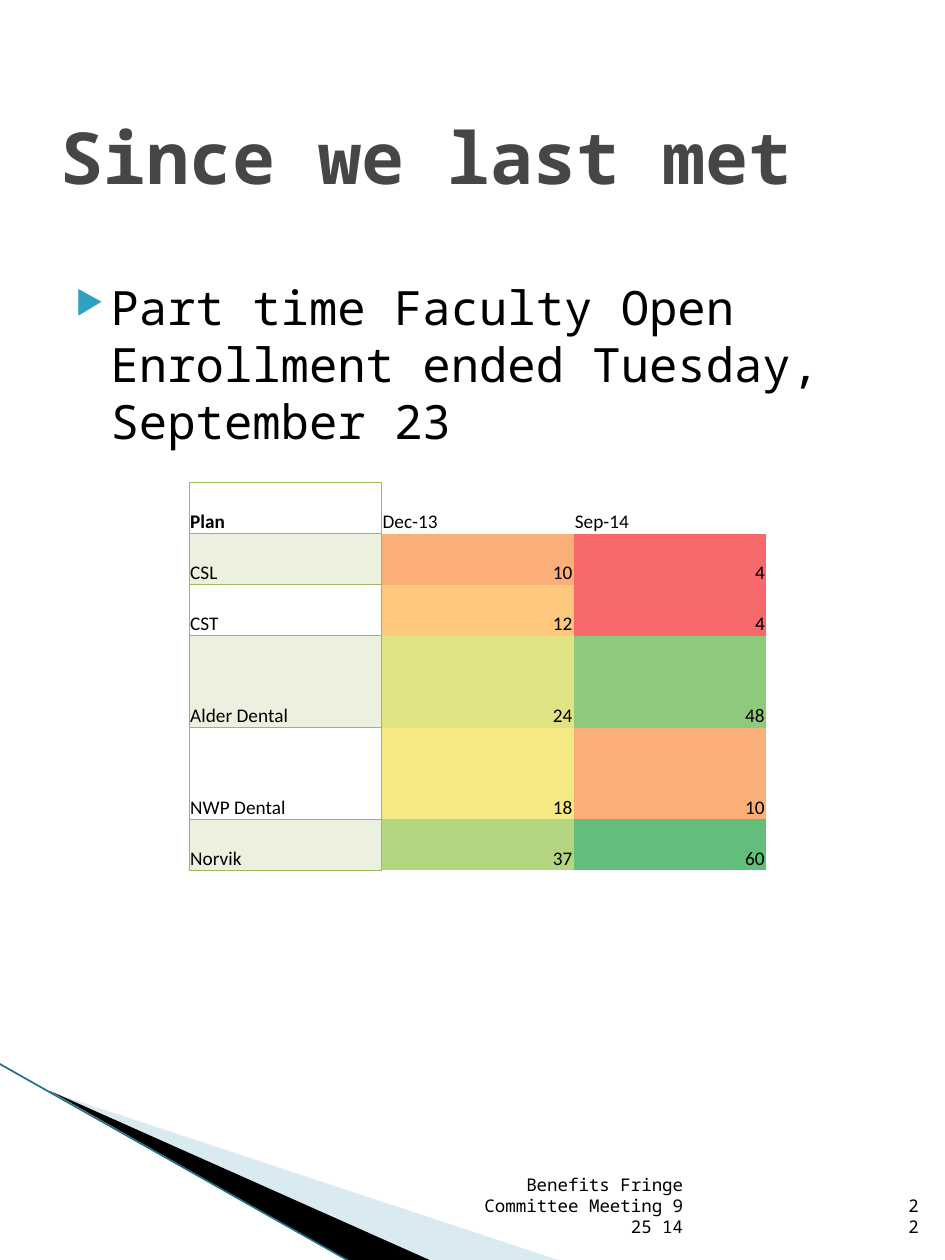
from dataclasses import dataclass

from lxml import etree
from pptx import Presentation
from pptx.dml.color import RGBColor
from pptx.enum.shapes import MSO_CONNECTOR
from pptx.enum.text import MSO_ANCHOR, PP_ALIGN
from pptx.oxml.ns import qn
from pptx.util import Inches, Pt

LEFT, RIGHT = PP_ALIGN.LEFT, PP_ALIGN.RIGHT
TOP, MIDDLE, BOTTOM = MSO_ANCHOR.TOP, MSO_ANCHOR.MIDDLE, MSO_ANCHOR.BOTTOM
STRAIGHT = MSO_CONNECTOR.STRAIGHT
PLAIN_TABLE_STYLE = "{2D5ABB26-0587-4C30-8999-92F81FD0307C}"


@dataclass(frozen=True)
class Theme:
    font: str = "Noto Sans Mono"
    table_font: str = "Calibri"
    text: str = "000000"
    title: str = "464646"
    bullet: str = "2DA2BF"
    pale_wedge: str = "A0CBDC"
    dark_wedge: str = "000000"
    edge: str = "1F7085"
    border: str = "9BBB59"
    band: str = "EBF1DE"
    title_size: float = 41
    body_size: float = 27
    table_size: float = 11
    footer_size: float = 10


THEME = Theme()

ENROLLMENT = [
    ("CSL", 10, 4),
    ("CST", 12, 4),
    ("Alder Dental", 24, 48),
    ("NWP Dental", 18, 10),
    ("Norvik", 37, 60),
]
HEAT = {4: "F8696B", 10: "FBAF78", 12: "FDC77D", 18: "F5E984",
        24: "E0E383", 37: "B3D580", 48: "8DCA7E", 60: "63BE7B"}


def add_xml(parent, tag, **attributes):
    return etree.SubElement(parent, qn(tag), attributes)


def write_text(frame, text, *, size, font=THEME.font, color=THEME.text,
               bold=False, align=LEFT, bullet=False):
    paragraph = frame.paragraphs[0]
    paragraph.alignment = align
    if bullet:
        add_bullet(paragraph)
    run = paragraph.add_run()
    run.text = text
    run.font.size, run.font.name, run.font.bold = Pt(size), font, bold
    run.font.color.rgb = RGBColor.from_string(color)


def add_bullet(paragraph):
    properties = paragraph._p.get_or_add_pPr()
    properties.set("marL", str(Inches(0.4)))
    properties.set("indent", str(Inches(-0.28)))
    bullet_color = add_xml(properties, "a:buClr")
    add_xml(bullet_color, "a:srgbClr", val=THEME.bullet)
    add_xml(properties, "a:buSzPct", val="68000")
    add_xml(properties, "a:buChar", char="▶")


def add_text(slide, text, left, top, width, height, *, anchor=TOP, **style):
    box = slide.shapes.add_textbox(Inches(left), Inches(top), Inches(width), Inches(height))
    box.text_frame.word_wrap = True
    box.text_frame.vertical_anchor = anchor
    write_text(box.text_frame, text, **style)


def add_wedge(slide, points, color, opacity=100):
    start, *rest = [(Inches(x), Inches(y)) for x, y in points]
    builder = slide.shapes.build_freeform(*start)
    builder.add_line_segments(rest, close=True)
    wedge = builder.convert_to_shape()
    wedge.shadow.inherit = False
    wedge.line.fill.background()
    wedge.fill.solid()
    wedge.fill.fore_color.rgb = RGBColor.from_string(color)
    if opacity < 100:
        fill_color = wedge._element.spPr.find(qn("a:solidFill"))[0]
        add_xml(fill_color, "a:alpha", val=str(opacity * 1000))


def add_corner(slide):
    """Draw the two wedges and the thin edge at the bottom left."""
    add_wedge(slide, [(0.41, 8.67), (4.46, 10.01), (3.42, 10.01)], THEME.pale_wedge, 40)
    add_wedge(slide, [(0.4, 8.66), (3.43, 10.01), (2.79, 10.02)], THEME.dark_wedge)
    edge = slide.shapes.add_connector(
        STRAIGHT, Inches(-0.01), Inches(8.44), Inches(2.79), Inches(10.02))
    edge.line.color.rgb = RGBColor.from_string(THEME.edge)
    edge.line.width = Pt(0.95)
    add_xml(edge._element.spPr, "a:effectLst")


def set_borders(cell, sides):
    """Line the given sides of a cell and clear the others."""
    properties = cell._tc.get_or_add_tcPr()
    for position, side in enumerate("LRTB"):
        line = etree.Element(qn(f"a:ln{side}"), w=str(Pt(0.5)))
        if side in sides:
            add_xml(add_xml(line, "a:solidFill"), "a:srgbClr", val=THEME.border)
        else:
            add_xml(line, "a:noFill")
        properties.insert(position, line)


def fill_cell(cell, value, *, fill=None, borders="", **style):
    cell.margin_left = cell.margin_right = cell.margin_top = Inches(0.01)
    cell.margin_bottom = 0
    cell.vertical_anchor = BOTTOM
    if fill:
        cell.fill.solid()
        cell.fill.fore_color.rgb = RGBColor.from_string(fill)
    else:
        cell.fill.background()
    set_borders(cell, borders)
    write_text(cell.text_frame, str(value), size=THEME.table_size,
               font=THEME.table_font, **style)


def add_enrollment_table(slide):
    heights = [0.405, 0.405, 0.405, 0.73, 0.73, 0.405]
    table = slide.shapes.add_table(
        len(heights), 3, Inches(1.5), Inches(3.83),
        Inches(4.58), Inches(sum(heights))).table
    table._tbl.tblPr.find(qn("a:tableStyleId")).text = PLAIN_TABLE_STYLE
    table.first_row = table.horz_banding = False
    for row, height in zip(table.rows, heights):
        row.height = Inches(height)

    fill_cell(table.cell(0, 0), "Plan", borders="LRTB", bold=True)
    for column, month in enumerate(("Dec-13", "Sep-14"), 1):
        fill_cell(table.cell(0, column), month, borders="L" if column == 1 else "")
    for row, (plan, *counts) in enumerate(ENROLLMENT, 1):
        fill_cell(table.cell(row, 0), plan, borders="LRTB",
                  fill=THEME.band if row % 2 else None)
        for column, count in enumerate(counts, 1):
            fill_cell(table.cell(row, column), count, fill=HEAT[count],
                      borders="L" if column == 1 else "", align=RIGHT)


def main():
    deck = Presentation()
    deck.slide_width, deck.slide_height = Inches(7.5), Inches(10)
    slide = deck.slides.add_slide(deck.slide_layouts[6])

    add_corner(slide)
    add_text(slide, "Part time Faculty Open Enrollment ended Tuesday, September 23",
             0.38, 2.16, 6.75, 6.6, size=THEME.body_size, bullet=True)
    add_text(slide, "Since we last met", 0.38, 0.4, 6.75, 1.67, anchor=MIDDLE,
             size=THEME.title_size, color=THEME.title, bold=True)
    footer = {"anchor": BOTTOM, "align": RIGHT, "size": THEME.footer_size}
    add_text(slide, "Benefits Fringe Committee Meeting 9 25 14", 3.59, 9.34, 1.93, 0.53, **footer)
    add_text(slide, "22", 7.09, 9.34, 0.3, 0.53, **footer)
    add_enrollment_table(slide)

    deck.save("out.pptx")


if __name__ == "__main__":
    main()
